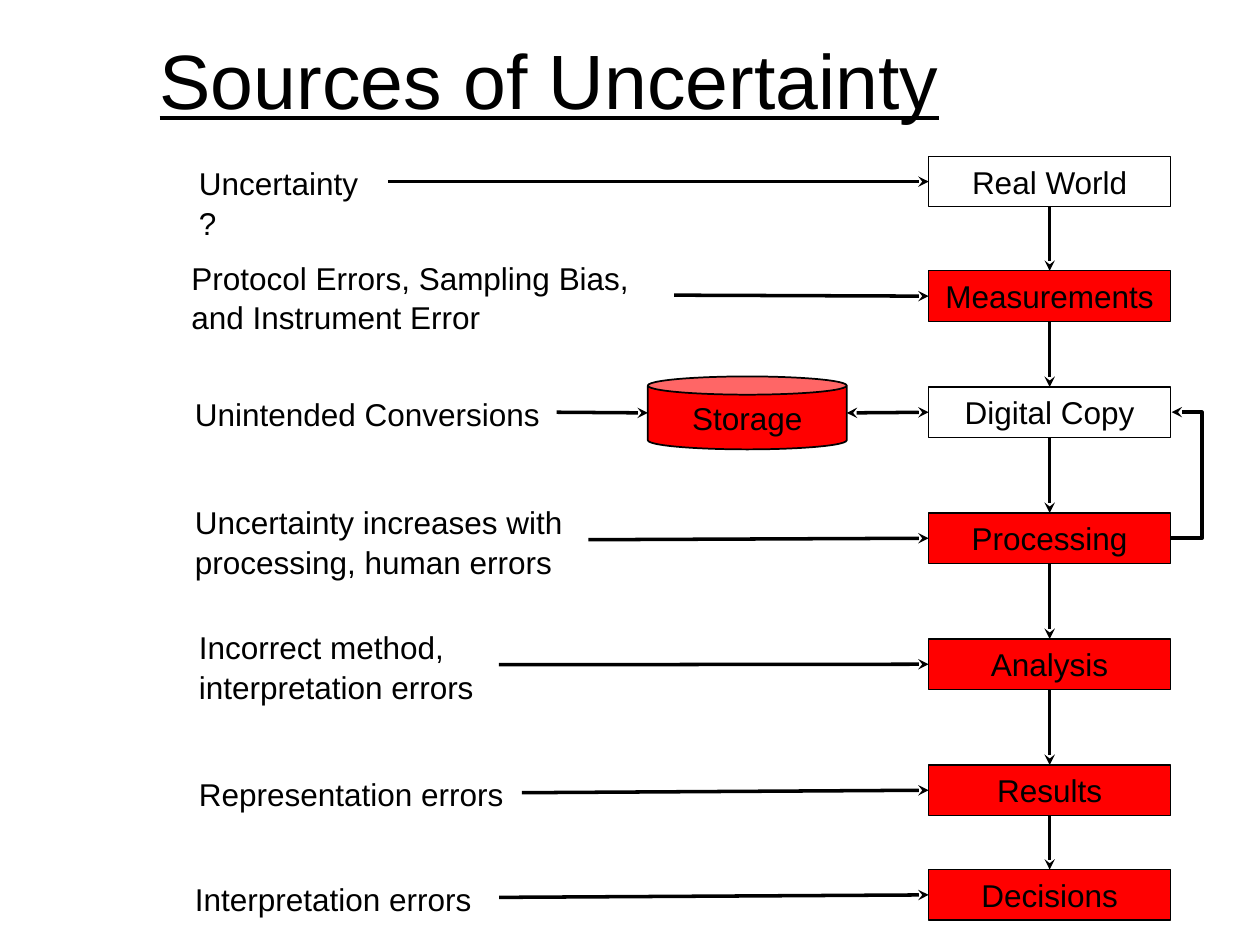
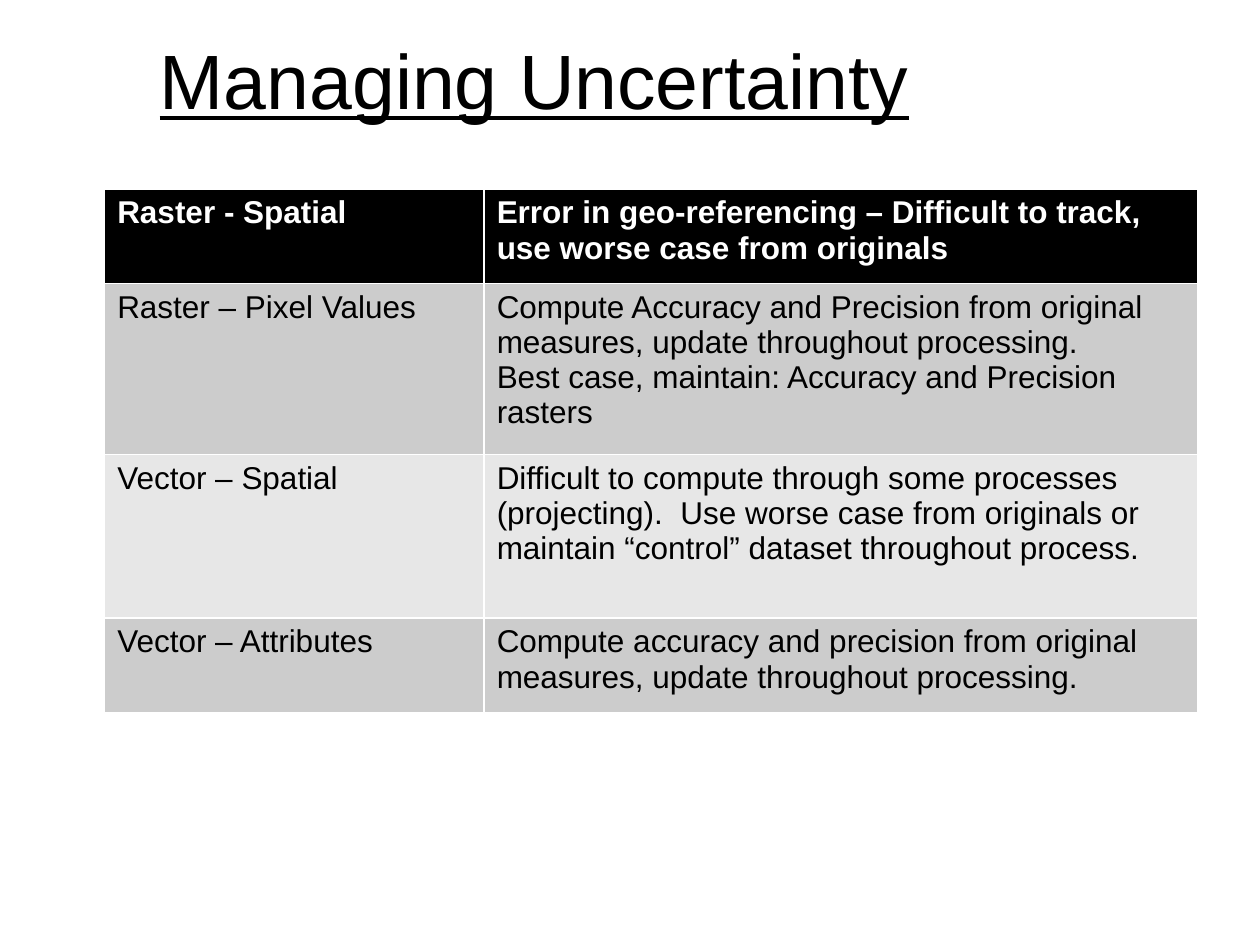
from dataclasses import dataclass

from lxml.etree import SubElement
from pptx import Presentation
from pptx.dml.color import RGBColor as Color
from pptx.enum.shapes import MSO_CONNECTOR as Connector, MSO_SHAPE as Preset
from pptx.enum.text import MSO_ANCHOR as Anchor, PP_ALIGN as Align
from pptx.oxml.ns import qn
from pptx.util import Cm, Pt


@dataclass(frozen=True)
class Theme:
    font: str = "Arial"
    ink: Color = Color(0, 0, 0)
    paper: Color = Color(255, 255, 255)
    uncertain: Color = Color(255, 0, 0)
    bands: tuple = (Color(0xCC, 0xCC, 0xCC), Color(0xE7, 0xE7, 0xE7))
    title_size: int = 44
    body_size: int = 18
    note_spacing: float = 1.05
    box_line: float = 0.75
    storage_line: float = 1
    arrow_line: float = 2


THEME = Theme()

SOURCES_TITLE = "Sources of Uncertainty"
STAGES = [
    ("Real World", 3.15, False),
    ("Measurements", 5.46, True),
    ("Digital Copy", 7.8, False),
    ("Processing", 10.34, True),
    ("Analysis", 12.88, True),
    ("Results", 15.42, True),
    ("Decisions", 17.53, True),
]
NOTES = [
    ("Uncertainty?", 3.76, 3.15, 4.06, 1),
    ("Protocol Errors, Sampling Bias, and Instrument Error", 3.61, 5.05, 9.98, 2),
    ("Unintended Conversions", 3.68, 7.8, 7.54, 1),
    ("Uncertainty increases with processing, human errors", 3.68, 9.98, 8.18, 2),
    ("Incorrect method, interpretation errors", 3.76, 12.5, 6.3, 2),
    ("Representation errors", 3.76, 15.47, 6.76, 1),
    ("Interpretation errors", 3.68, 17.58, 6.38, 1),
]
STORAGE_TEXT = "Storage"
STORED_STAGE, LOOP_STAGE = 2, 3

MANAGING_TITLE = "Managing Uncertainty"
MANAGING_ROWS = [
    ("Raster - Spatial",
     "Error in geo-referencing – Difficult to track, use worse case from originals"),
    ("Raster – Pixel Values",
     "Compute Accuracy and Precision from original measures, update throughout processing.\n"
     "Best case, maintain: Accuracy and Precision rasters"),
    ("Vector – Spatial",
     "Difficult to compute through some processes (projecting).  Use worse case from originals "
     "or maintain “control” dataset throughout process."),
    ("Vector – Attributes",
     "Compute accuracy and precision from original measures, update throughout processing."),
]

SLIDE_SIZE = (25.4, 19.05)
TITLE_AREA = (2.97, 0, 22.02, 3.18)
STAGE_LEFT, STAGE_WIDTH, STAGE_HEIGHT = 18.72, 4.88, 1.02
STAGE_RIGHT = STAGE_LEFT + STAGE_WIDTH
STAGE_CENTRE = STAGE_LEFT + STAGE_WIDTH / 2
NOTE_HEIGHTS = {1: 1.02, 2: 1.8}
STORAGE_AREA = (13.06, 7.59, 4.01, 1.47)
LOOP_REACH, LOOP_SHIFT = 0.63, 0.02
TABLE_AREA = (2.11, 3.81, 22.02, 10.57)
COLUMN_WIDTHS = (7.65, 14.38)
ROW_HEIGHTS = (1.9, 3.45, 3.3, 1.9)


def cm(*values):
    return [Cm(value) for value in values]


def set_text(frame, text, size=THEME.body_size, color=THEME.ink, bold=False,
             underline=False, align=Align.LEFT, spacing=None):
    frame.text = text
    frame.word_wrap = True
    for paragraph in frame.paragraphs:
        paragraph.alignment = align
        paragraph.line_spacing = spacing
        for run in paragraph.runs:
            font = run.font
            font.name, font.size = THEME.font, Pt(size)
            font.bold, font.underline = bold, underline
            font.color.rgb = color


def add_text(slide, text, area, anchor=Anchor.TOP, **style):
    frame = slide.shapes.add_textbox(*cm(*area)).text_frame
    set_text(frame, text, **style)
    frame.vertical_anchor = anchor


def add_titled_slide(presentation, title):
    slide = presentation.slides.add_slide(presentation.slide_layouts[6])
    add_text(slide, title, TITLE_AREA, Anchor.MIDDLE, size=THEME.title_size, underline=True)
    return slide


def add_block(slide, preset, text, area, filled, line_width):
    shape = slide.shapes.add_shape(preset, *cm(*area))
    shape.shadow.inherit = False
    if filled:
        shape.fill.solid()
        shape.fill.fore_color.rgb = THEME.uncertain
    else:
        shape.fill.background()
    shape.line.color.rgb = THEME.ink
    shape.line.width = Pt(line_width)
    set_text(shape.text_frame, text, align=Align.CENTER)
    shape.text_frame.vertical_anchor = Anchor.MIDDLE


def add_arrow(slide, start, end, kind=Connector.STRAIGHT, ends=("tailEnd",)):
    connector = slide.shapes.add_connector(kind, *cm(*start, *end))
    connector.line.color.rgb = THEME.ink
    connector.line.width = Pt(THEME.arrow_line)
    properties = connector._element.spPr
    outline = properties.find(qn("a:ln"))
    for name in ends:
        SubElement(outline, qn(f"a:{name}"), type="stealth")
    SubElement(properties, qn("a:effectLst"))
    return connector


def add_loop(slide, start_y, end_y):
    loop = add_arrow(slide, (STAGE_RIGHT, start_y), (STAGE_RIGHT + LOOP_SHIFT, end_y),
                     Connector.ELBOW)
    geometry = loop._element.spPr.find(qn("a:prstGeom"))
    guides = geometry.find(qn("a:avLst"))
    if guides is None:
        guides = SubElement(geometry, qn("a:avLst"))
    reach = round(LOOP_REACH / LOOP_SHIFT * 100000)
    SubElement(guides, qn("a:gd"), name="adj1", fmla=f"val {reach}")


def build_sources(presentation):
    slide = add_titled_slide(presentation, SOURCES_TITLE)
    middles = [top + STAGE_HEIGHT / 2 for _, top, _ in STAGES]
    for text, top, filled in STAGES:
        add_block(slide, Preset.RECTANGLE, text,
                  (STAGE_LEFT, top, STAGE_WIDTH, STAGE_HEIGHT), filled, THEME.box_line)
    for (_, top, _), (_, next_top, _) in zip(STAGES, STAGES[1:]):
        add_arrow(slide, (STAGE_CENTRE, top + STAGE_HEIGHT), (STAGE_CENTRE, next_top))

    left, top, width, height = STORAGE_AREA
    storage_middle = top + height / 2
    add_block(slide, Preset.CAN, STORAGE_TEXT, STORAGE_AREA, True, THEME.storage_line)
    add_arrow(slide, (STAGE_LEFT, middles[STORED_STAGE]), (left + width, storage_middle),
              ends=("headEnd", "tailEnd"))
    add_loop(slide, middles[LOOP_STAGE], middles[STORED_STAGE])

    targets = [(STAGE_LEFT, middle) for middle in middles]
    targets[STORED_STAGE] = (left, storage_middle)
    for (text, note_left, note_top, note_width, lines), target in zip(NOTES, targets):
        note_height = NOTE_HEIGHTS[lines]
        add_text(slide, text, (note_left, note_top, note_width, note_height),
                 spacing=THEME.note_spacing)
        add_arrow(slide, (note_left + note_width, note_top + note_height / 2), target)


def build_managing(presentation):
    slide = add_titled_slide(presentation, MANAGING_TITLE)
    table = slide.shapes.add_table(len(MANAGING_ROWS), len(COLUMN_WIDTHS),
                                   *cm(*TABLE_AREA)).table
    for column, width in zip(table.columns, COLUMN_WIDTHS):
        column.width = Cm(width)
    for index, (row, height, texts) in enumerate(zip(table.rows, ROW_HEIGHTS, MANAGING_ROWS)):
        row.height = Cm(height)
        header = index == 0
        for cell, text in zip(row.cells, texts):
            cell.fill.solid()
            cell.fill.fore_color.rgb = THEME.ink if header else THEME.bands[(index - 1) % 2]
            set_text(cell.text_frame, text, bold=header,
                     color=THEME.paper if header else THEME.ink)


def main():
    presentation = Presentation()
    presentation.slide_width, presentation.slide_height = cm(*SLIDE_SIZE)
    build_sources(presentation)
    build_managing(presentation)
    presentation.save("out.pptx")


if __name__ == "__main__":
    main()
